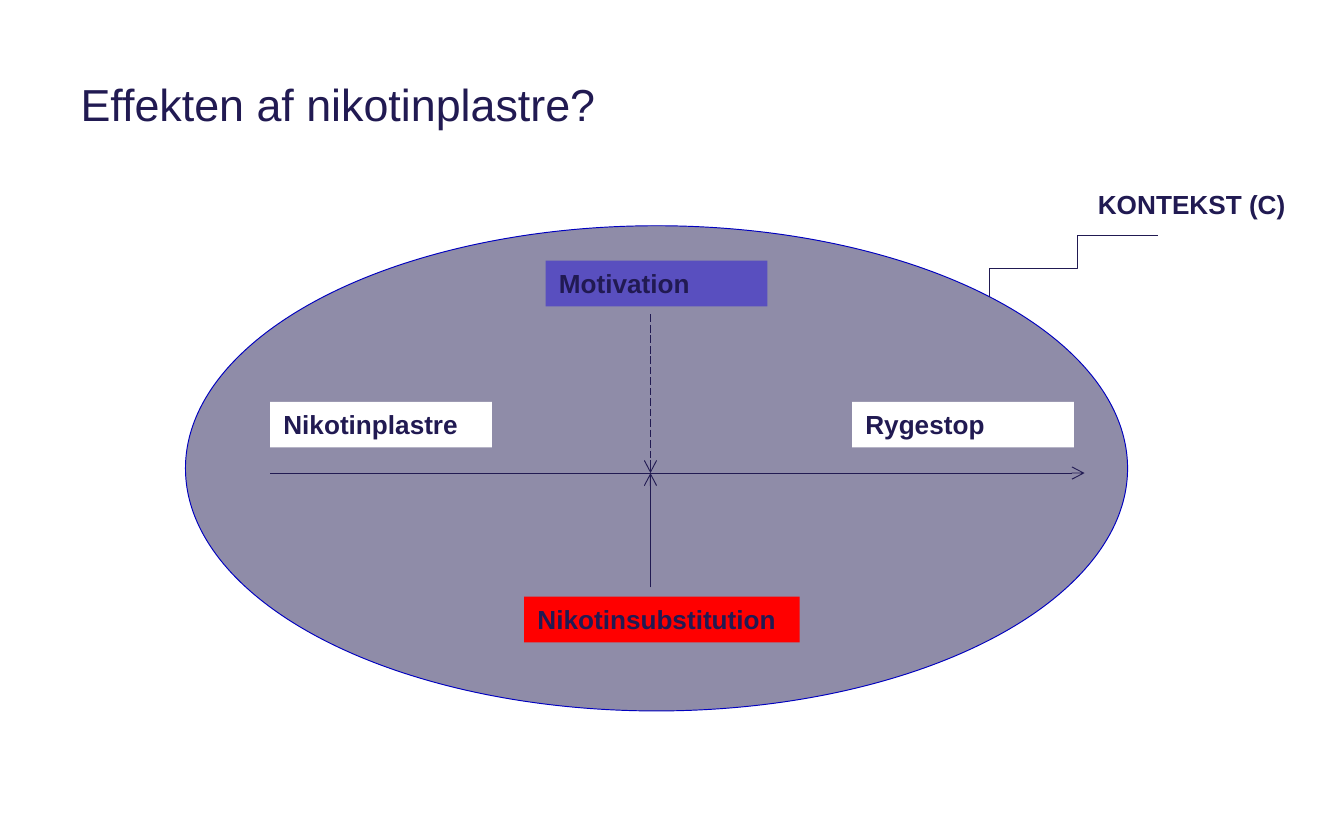
"""Build the slide on how nicotine patches affect smoking cessation."""
from lxml import etree
from pptx import Presentation
from pptx.dml.color import RGBColor
from pptx.enum import dml, shapes, text
from pptx.oxml.ns import qn
from pptx.util import Inches, Pt

NAVY = "211A52"


def colour(value):
    return RGBColor.from_string(value)


def write(frame, words, size, bold=False, anchor=text.MSO_ANCHOR.TOP):
    frame.word_wrap = True
    frame.vertical_anchor = anchor
    para = frame.paragraphs[0]
    para.alignment = text.PP_ALIGN.LEFT
    span = para.add_run()
    span.text = words
    span.font.name = "Arial"
    span.font.size = Pt(size)
    span.font.bold = bold
    span.font.color.rgb = colour(NAVY)


deck = Presentation()
deck.slide_width, deck.slide_height = Inches(10), Inches(6.25)
page = deck.slides.add_slide(deck.slide_layouts[5])

title = page.shapes.title
title.left, title.top = Inches(0.5), Inches(0.25)
title.width, title.height = Inches(9), Inches(1.04)
write(title.text_frame, "Effekten af nikotinplastre?", 24, anchor=text.MSO_ANCHOR.MIDDLE)

context = page.shapes.add_shape(
    shapes.MSO_SHAPE.OVAL, Inches(1.38), Inches(1.68), Inches(7.01), Inches(3.61)
)
context.shadow.inherit = False
context.fill.solid()
context.fill.fore_color.rgb = colour(NAVY)
fill_colour = context.fill._xPr.find(qn("a:solidFill"))[0]
etree.SubElement(fill_colour, qn("a:alpha"), val="50000")
context.line.color.rgb = colour("0000BF")
context.line.width = Pt(0.5)

arrows = [
    (2.01, 3.52, 8.07, 3.52, None),
    (4.84, 4.37, 4.84, 3.52, None),
    (4.84, 2.34, 4.84, 3.52, dml.MSO_LINE.LONG_DASH),
]
for x1, y1, x2, y2, dash in arrows:
    arrow = page.shapes.add_connector(
        shapes.MSO_CONNECTOR.STRAIGHT, Inches(x1), Inches(y1), Inches(x2), Inches(y2)
    )
    arrow.line.color.rgb = colour(NAVY)
    arrow.line.width = Pt(0.5)
    if dash:
        arrow.line.dash_style = dash
    etree.SubElement(arrow.line._get_or_add_ln(), qn("a:tailEnd"), type="arrow")
    etree.SubElement(arrow._element.spPr, qn("a:effectLst"))

outline = page.shapes.build_freeform(Inches(7.36), Inches(2.21))
corners = [(7.36, 2), (8.02, 2), (8.02, 1.75), (8.62, 1.75)]
outline.add_line_segments([(Inches(x), Inches(y)) for x, y in corners], close=False)
callout = outline.convert_to_shape()
callout.shadow.inherit = False
callout.fill.background()
callout.line.color.rgb = colour(NAVY)
callout.line.width = Pt(0.5)

labels = [
    ("Nikotinplastre", 2.01, 2.99, 1.65, "FFFFFF"),
    ("Rygestop", 6.34, 2.99, 1.65, "FFFFFF"),
    ("Nikotinsubstitution", 3.9, 4.44, 2.05, "FF0000"),
    ("Motivation", 4.06, 1.94, 1.65, "594FBF"),
    ("KONTEKST (C)", 8.07, 1.35, 1.65, "FFFFFF"),
]
for words, left, top, width, fill in labels:
    box = page.shapes.add_textbox(Inches(left), Inches(top), Inches(width), Inches(0.34))
    box.fill.solid()
    box.fill.fore_color.rgb = colour(fill)
    write(box.text_frame, words, 14, bold=True)
    box.text_frame.auto_size = text.MSO_AUTO_SIZE.SHAPE_TO_FIT_TEXT

deck.save("out.pptx")
